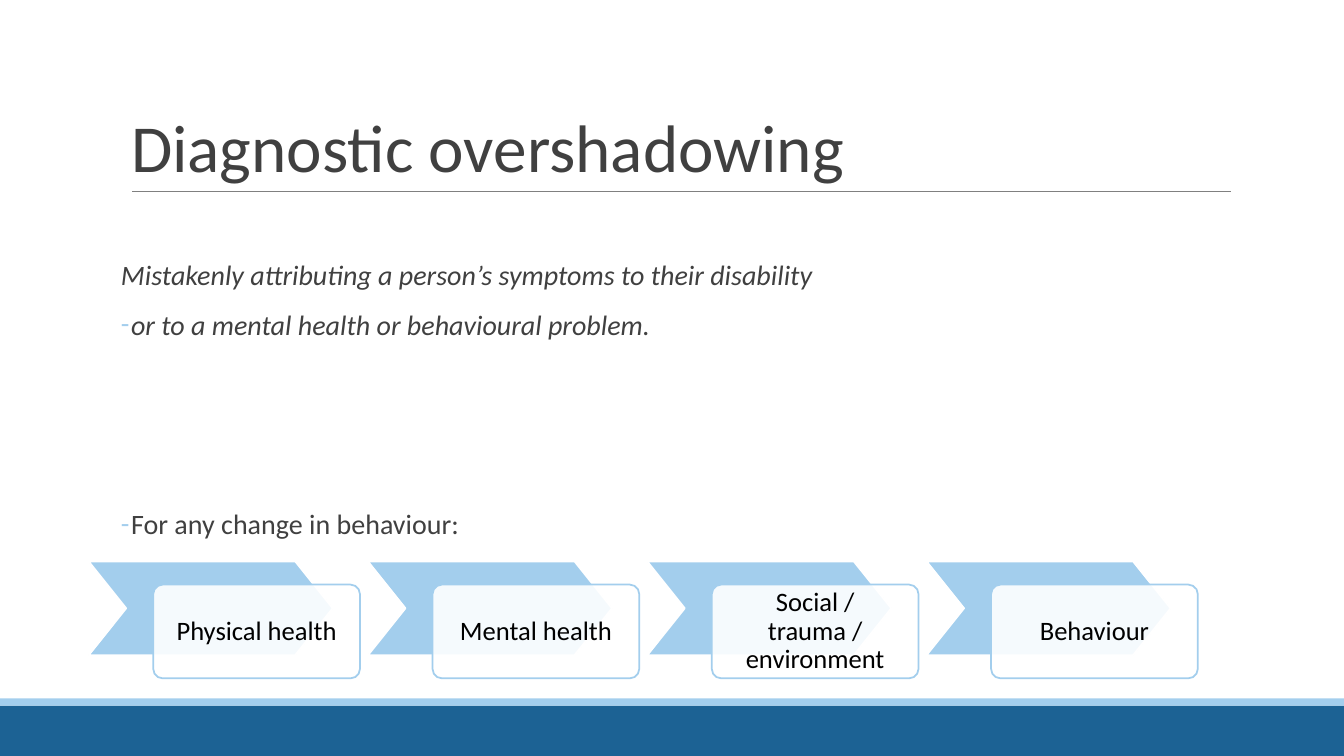
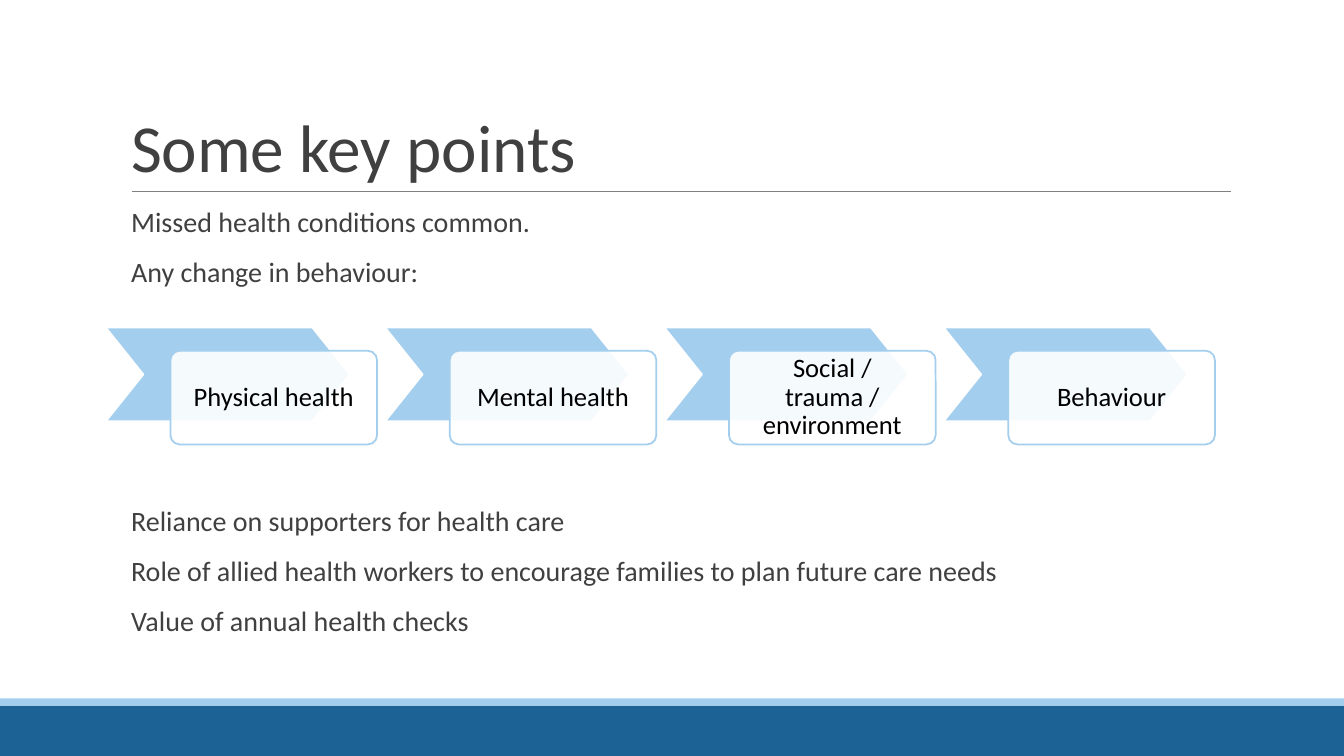
from lxml import etree
from pptx import Presentation
from pptx.dml.color import RGBColor
from pptx.enum.shapes import MSO_CONNECTOR, MSO_SHAPE
from pptx.enum.text import MSO_ANCHOR, MSO_AUTO_SIZE, PP_ALIGN
from pptx.oxml.ns import qn
from pptx.util import Inches, Pt

RECT, CARD, ARROW = MSO_SHAPE.RECTANGLE, MSO_SHAPE.ROUNDED_RECTANGLE, MSO_SHAPE.CHEVRON
STRAIGHT = MSO_CONNECTOR.STRAIGHT
MIDDLE, BOTTOM, TOP = MSO_ANCHOR.MIDDLE, MSO_ANCHOR.BOTTOM, MSO_ANCHOR.TOP
LEFT, CENTER = PP_ALIGN.LEFT, PP_ALIGN.CENTER
FIXED = MSO_AUTO_SIZE.NONE

FONT = "Calibri"
NAVY, SKY, GREY, INK, BLACK, WHITE = "1C6294", "A3CEED", "808080", "404040", "000000", "FFFFFF"
STEPS = ["Physical health", "Mental health", "Social / trauma / environment", "Behaviour"]
PITCH = 2.77


def color(code):
    """Turn a hex string into a colour."""
    return RGBColor.from_string(code)


def place(item, left, top, width, height):
    """Set position and size in inches."""
    item.left, item.top = Inches(left), Inches(top)
    item.width, item.height = Inches(width), Inches(height)


def add_run(para, text, size, ink, italic=False):
    """Add one formatted run and return it."""
    run = para.add_run()
    run.text = text
    font = run.font
    font.name, font.size, font.italic = FONT, Pt(size), italic
    font.color.rgb = color(ink)
    return run


def set_frame(frame, anchor, side, edge):
    """Set wrapping, anchor and margins of a text frame."""
    frame.word_wrap = True
    frame.auto_size = FIXED
    frame.vertical_anchor = anchor
    frame.margin_left = frame.margin_right = Inches(side)
    frame.margin_top = frame.margin_bottom = Inches(edge)


def add_box(slide, kind, box, fill, line=None, adj=None):
    """Add a filled preset shape."""
    shape = slide.shapes.add_shape(kind, *[Inches(n) for n in box])
    shape.shadow.inherit = False
    shape.fill.solid()
    shape.fill.fore_color.rgb = color(fill)
    if line:
        shape.line.color.rgb = color(line)
        shape.line.width = Pt(1.25)
    else:
        shape.line.fill.background()
    if adj is not None:
        shape.adjustments[0] = adj
    return shape


def fade(shape, share):
    """Set the opacity of a solid fill in percent."""
    tone = shape.element.spPr.find(qn("a:solidFill"))[0]
    etree.SubElement(tone, qn("a:alpha")).set("val", str(share * 1000))


def set_layout(layout, slide):
    """Place the layout's placeholders and give it the bands and rule."""
    for holder in list(layout.placeholders):
        if holder.placeholder_format.idx >= 10:
            holder.element.getparent().remove(holder.element)
    title, body = layout.placeholders
    place(title, 1.2, 0.31, 11, 1.59)
    place(body, 1.2, 2.02, 11, 4.4)
    rule = slide.shapes.add_connector(
        STRAIGHT, Inches(1.31), Inches(1.9), Inches(12.21), Inches(1.9))
    rule.line.color.rgb = color(GREY)
    rule.line.width = Pt(0.5)
    etree.SubElement(rule.element.spPr, qn("a:effectLst"))
    band = add_box(slide, RECT, (0, 7, 13.33, 0.5), NAVY)
    strip = add_box(slide, RECT, (0, 6.93, 13.33, 0.07), SKY)
    for part in (band, strip, rule):
        layout.shapes.element.append(part.element)


def set_title(slide, text):
    """Fill the title placeholder."""
    frame = slide.shapes.title.text_frame
    set_frame(frame, BOTTOM, 0.1, 0.05)
    para = frame.paragraphs[0]
    para.alignment = LEFT
    para.line_spacing = 0.85
    run = add_run(para, text, 48, INK)
    run.font.element.set("spc", "-50") if hasattr(run.font, "element") else None


def set_bullet(para, indent, mark):
    """Set the indent and an optional dash."""
    props = para._p.get_or_add_pPr()
    props.set("marL", str(Inches(indent)))
    props.set("indent", str(-Inches(indent) if mark else 0))
    if mark:
        tint = etree.SubElement(props, qn("a:buClr"))
        etree.SubElement(tint, qn("a:srgbClr")).set("val", SKY)
        etree.SubElement(props, qn("a:buFont")).set("typeface", FONT)
        etree.SubElement(props, qn("a:buChar")).set("char", mark)
    else:
        etree.SubElement(props, qn("a:buNone"))


def set_body(slide, rows):
    """Fill the body from rows of text, space before, indent, mark, italic."""
    frame = slide.placeholders[1].text_frame
    set_frame(frame, TOP, 0, 0.05)
    for num, (text, gap, indent, mark, italic) in enumerate(rows):
        para = frame.add_paragraph() if num else frame.paragraphs[0]
        set_bullet(para, indent, mark)
        para.line_spacing = 0.9
        para.space_before, para.space_after = Pt(gap), Pt(2)
        add_run(para, text, 20, INK, italic)


def add_steps(slide, left, top):
    """Draw the row of chevrons with their label cards."""
    for num, text in enumerate(STEPS):
        x = left + num * PITCH
        add_box(slide, ARROW, (x, top, 2.42, 0.93), SKY, WHITE, 0.4)
        card = add_box(slide, CARD, (x + 0.64, top + 0.23, 2.05, 0.93), WHITE, SKY, 0.1)
        fade(card, 90)
        set_frame(card.text_frame, MIDDLE, 0.15, 0)
        para = card.text_frame.paragraphs[0]
        para.alignment = CENTER
        para.line_spacing = 0.9
        add_run(para, text, 19, BLACK)


def main():
    """Build and save the deck."""
    deck = Presentation()
    deck.slide_width, deck.slide_height = Inches(13.33), Inches(7.5)
    layout = deck.slide_layouts[1]

    slide = deck.slides.add_slide(layout)
    set_layout(layout, slide)
    set_title(slide, "Diagnostic overshadowing")
    place(slide.placeholders[1], 1.2, 2.54, 11, 3.88)
    set_body(slide, [
        ("Mistakenly attributing a person’s symptoms to their disability", 0, 0, None, True),
        ("or to a mental health or behavioural problem.", 12, 0.1, "-", True),
        ("For any change in behaviour:", 119, 0.1, "-", False),
    ])
    add_steps(slide, 0.88, 5.57)

    slide = deck.slides.add_slide(layout)
    set_title(slide, "Some key points")
    set_body(slide, [
        ("Missed health conditions common.", 0, 0.1, None, False),
        ("Any change in behaviour:", 12, 0.1, None, False),
        ("Reliance on supporters for health care", 154, 0.1, None, False),
        ("Role of allied health workers to encourage families to plan future care needs",
         12, 0.1, None, False),
        ("Value of annual health checks", 12, 0.1, None, False),
    ])
    add_steps(slide, 1.05, 3.25)
    deck.save("out.pptx")


if __name__ == "__main__":
    main()
